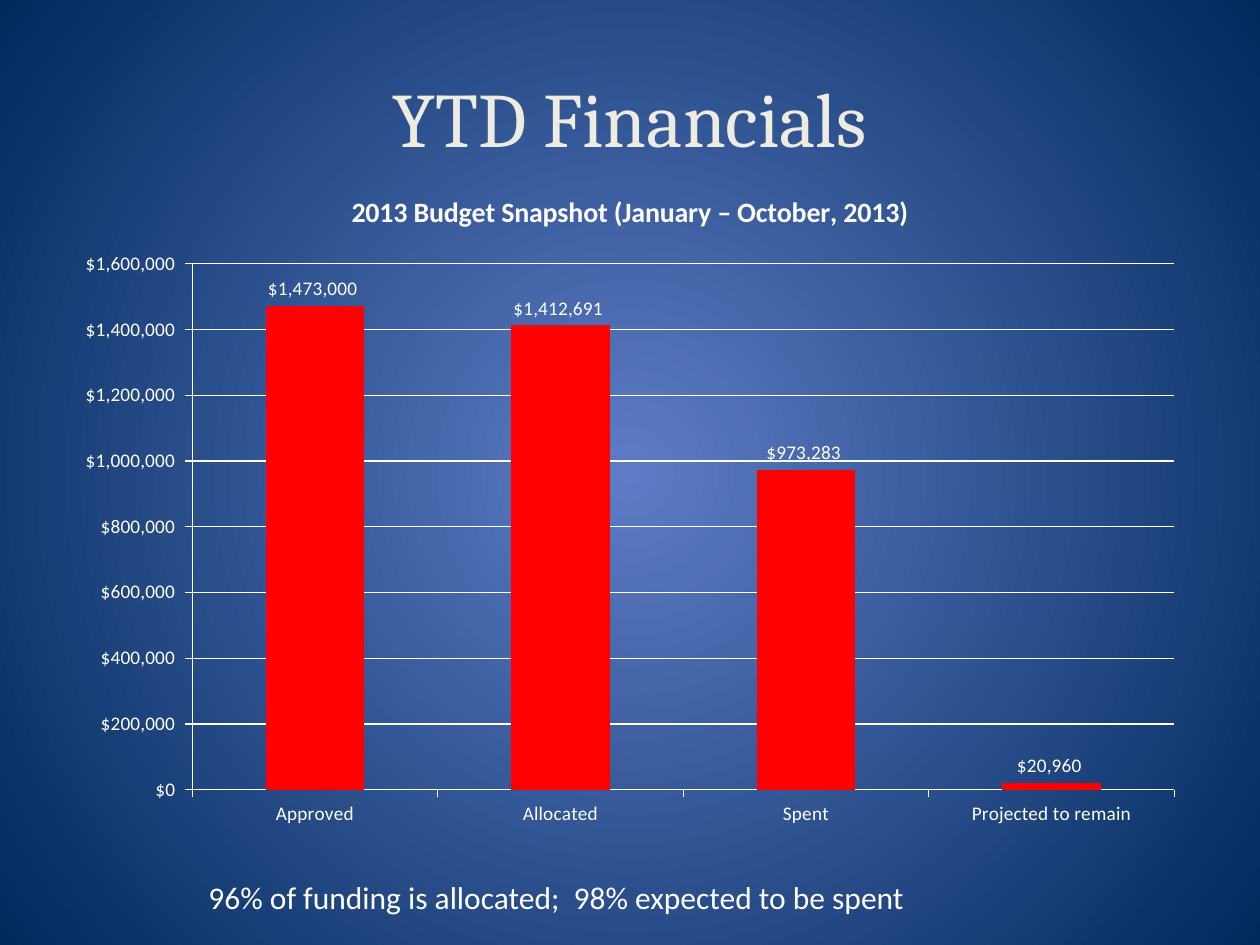
from lxml import etree
from pptx import Presentation
from pptx.chart.data import CategoryChartData
from pptx.dml.color import RGBColor
from pptx.enum import chart as ch, text as tx
from pptx.oxml.ns import qn
from pptx.util import Inches, Pt

COLORS = {"glow": "5E7CC5", "navy": "00295C", "cream": "EEECE1",
          "white": "FFFFFF", "red": "FF0000"}
MONEY = '"$"#,##0_);\\("$"#,##0\\)'


def rgb(name):
    return RGBColor.from_string(COLORS[name])


class Deck:
    head, body = "Cambria", "Calibri"

    def __init__(self):
        self.prs = Presentation()
        self.prs.slide_width, self.prs.slide_height = Inches(10), Inches(7.5)
        self.slide = self.prs.slides.add_slide(self.prs.slide_layouts[6])

    def style(self, font, size, color, name=None, bold=False):
        font.name, font.size, font.bold = name or self.body, Pt(size), bold
        font.color.rgb = rgb(color)

    def glow(self, inner, outer):
        """Radial background, from the centre outwards."""
        fill = self.slide.background.fill
        fill.gradient()
        for stop, color, pos in zip(fill.gradient_stops, (inner, outer), (0, 1)):
            stop.color.rgb = rgb(color)
            stop.position = pos
        grad = self.slide.element.find(".//" + qn("a:gradFill"))
        grad.remove(grad.find(qn("a:lin")))
        ring = etree.SubElement(grad, qn("a:path"), path="circle")
        etree.SubElement(ring, qn("a:fillToRect"),
                         dict.fromkeys("ltrb", "50000"))

    def text(self, words, box, size, color, name=None,
             align=tx.PP_ALIGN.LEFT, anchor=tx.MSO_ANCHOR.TOP):
        frame = self.slide.shapes.add_textbox(*map(Inches, box)).text_frame
        frame.word_wrap = True
        frame.vertical_anchor = anchor
        frame.text = words
        para = frame.paragraphs[0]
        para.alignment = align
        self.style(para.runs[0].font, size, color, name)

    def columns(self, title, data, box, color):
        chart = self.slide.shapes.add_chart(
            ch.XL_CHART_TYPE.COLUMN_CLUSTERED, *map(Inches, box), data).chart
        self.style(chart.font, 11, "white")
        chart.has_legend = False

        # Title
        frame = chart.chart_title.text_frame
        frame.text = title
        self.style(frame.paragraphs[0].runs[0].font, 16, "white", bold=True)
        chart.chart_title.include_in_layout = False

        # Axes and grid
        cats, vals = chart.category_axis, chart.value_axis
        vals.has_major_gridlines = True
        vals.tick_labels.number_format = MONEY
        vals.tick_labels.number_format_is_linked = False
        for axis in (cats, vals):
            axis.major_tick_mark = ch.XL_TICK_MARK.OUTSIDE
        for line in (cats.format.line, vals.format.line,
                     vals.major_gridlines.format.line):
            line.color.rgb = rgb("white")
            line.width = Pt(0.75)

        # Bars and labels
        plot = chart.plots[0]
        plot.gap_width = 150
        plot.vary_by_categories = False
        bars = plot.series[0]
        bars.format.fill.solid()
        bars.format.fill.fore_color.rgb = rgb(color)
        labels = bars.data_labels
        labels.show_value = True
        labels.position = ch.XL_LABEL_POSITION.OUTSIDE_END
        labels.number_format = MONEY
        labels.number_format_is_linked = False
        self.style(labels.font, 11, "white")


def main():
    deck = Deck()
    deck.glow("glow", "navy")

    # Heading
    deck.text("YTD Financials", (0.5, 0.3, 9, 1.25), 44, "cream", deck.head,
              tx.PP_ALIGN.CENTER, tx.MSO_ANCHOR.MIDDLE)

    # Takeaway
    deck.text(" 96% of funding is allocated;  98% expected to be spent",
              (1.5, 6.92, 6.25, 0.4), 18, "white")

    # Budget chart
    data = CategoryChartData()
    data.categories = ["Approved", "Allocated", "Spent", "Projected to remain"]
    data.add_series("Series 1", (1473000, 1412691, 973283, 20960))
    deck.columns("2013 Budget Snapshot (January – October, 2013)", data,
                 (0.5, 1.33, 9, 5.33), "red")

    deck.prs.save("out.pptx")


if __name__ == "__main__":
    main()
